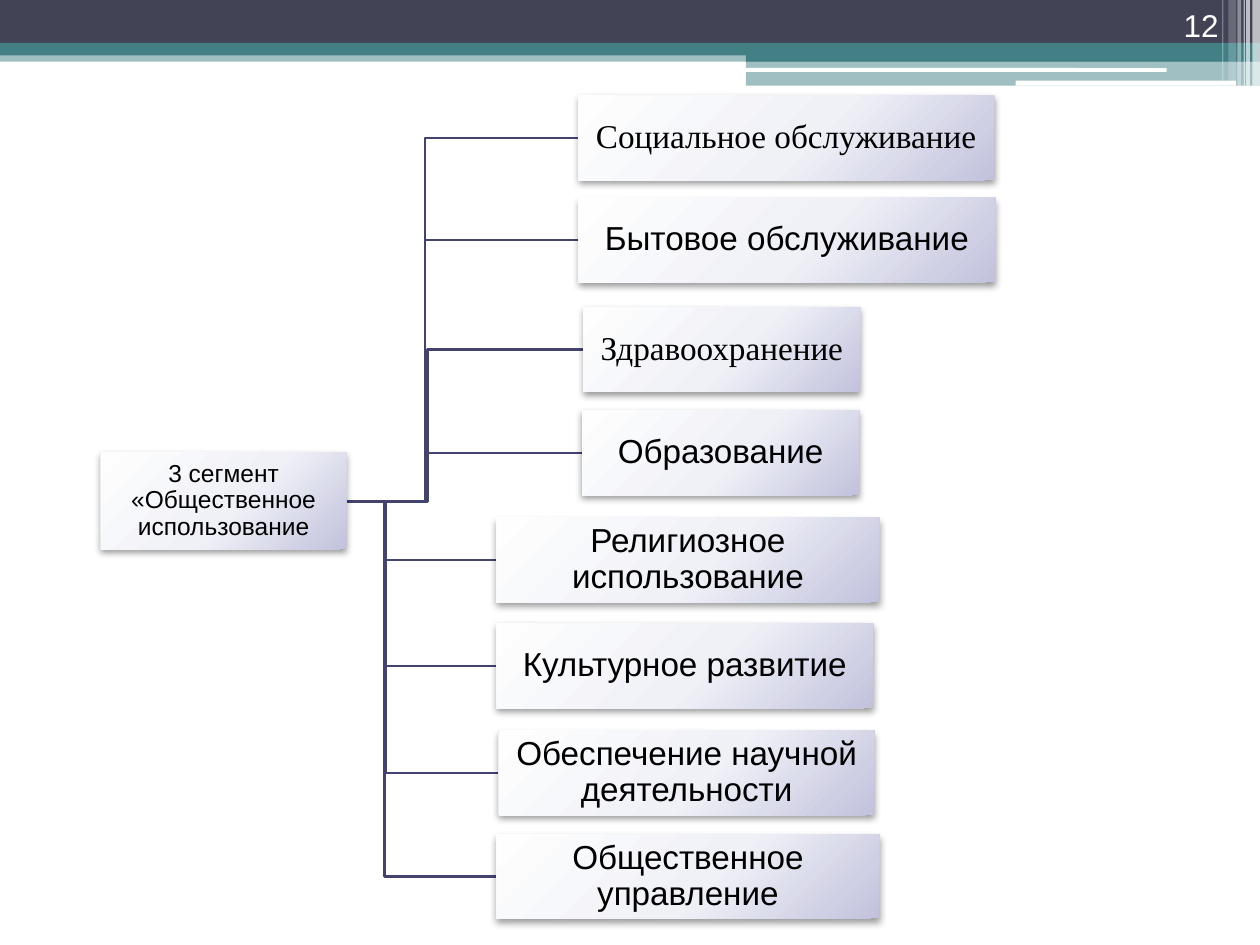
import pptx
import pptx.util
import pptx.dml.color
import pptx.enum.shapes
import pptx.enum.text
import pptx.oxml
import pptx.oxml.ns
from lxml import etree

Inches, Pt = pptx.util.Inches, pptx.util.Pt
RGBColor = pptx.dml.color.RGBColor
MSO_SHAPE = pptx.enum.shapes.MSO_SHAPE
PP_ALIGN = pptx.enum.text.PP_ALIGN
MSO_ANCHOR = pptx.enum.text.MSO_ANCHOR
qn = pptx.oxml.ns.qn

TEAL = RGBColor(0x43, 0x80, 0x86)
SLATE = RGBColor(0x42, 0x44, 0x56)
WHITE = RGBColor(0xFF, 0xFF, 0xFF)
BLACK = RGBColor(0, 0, 0)
LINK = RGBColor(0x42, 0x43, 0x6F)
BOX_STOPS = [
    (0, RGBColor(0xFE, 0xFE, 0xFE)),
    (55, RGBColor(0xF0, 0xF1, 0xF7)),
    (100, RGBColor(0xC2, 0xC2, 0xDD)),
]

SANS, SERIF = "Arial", "Times New Roman"
BOX_H = 0.67
LINK_START = (2.16, 3.98)
ROOT = (0.8, 3.59, 1.95, 0.77)

# left, top, width, text, font
BRANCHES = [
    (4.59, 0.76, 3.3, "Социальное обслуживание", SERIF),
    (4.59, 1.57, 3.31, "Бытовое обслуживание", SANS),
    (4.63, 2.44, 2.2, "Здравоохранение", SERIF),
    (4.62, 3.26, 2.2, "Образование", SANS),
    (3.94, 4.11, 3.04, "Религиозное использование", SANS),
    (3.94, 4.95, 2.99, "Культурное развитие", SANS),
    (3.96, 5.8, 2.98, "Обеспечение научной деятельности", SANS),
    (3.94, 6.62, 3.04, "Общественное управление", SANS),
]

# left, top, width, height, colour, opacity in percent
BANDS = [
    (0, 0.4, 10, 0.09, TEAL, 50),
    (0, 0, 10, 0.34, SLATE, 100),
    (0, 0.34, 10, 0.1, TEAL, 100),
    (5.92, 0.39, 4.08, 0.1, TEAL, 100),
    (5.92, 0.48, 4.08, 0.2, TEAL, 50),
]
PILLS = [(5.91, 0.54, 3.35, 0.03), (8.06, 0.64, 1.75, 0.04)]
# left, width, height, opacity in percent
STRIPES = [
    (9.94, 0.06, 0.68, 65),
    (9.89, 0.03, 0.68, 65),
    (9.87, 0.01, 0.68, 60),
    (9.82, 0.03, 0.68, 40),
    (9.75, 0.06, 0.64, 20),
    (9.7, 0.01, 0.64, 30),
]


def add_block(slide, box, color, opacity=100, kind=MSO_SHAPE.RECTANGLE):
    s = slide.shapes.add_shape(kind, *map(Inches, box))
    s.shadow.inherit = False
    s.line.fill.background()
    s.fill.solid()
    s.fill.fore_color.rgb = color
    if opacity < 100:
        clr = s.fill._xPr.find(".//" + qn("a:srgbClr"))
        etree.SubElement(clr, qn("a:alpha"), val=str(opacity * 1000))
    return s


def set_box_gradient(s):
    stops = "".join(
        f'<a:gs pos="{pos * 1000}"><a:srgbClr val="{color}"/></a:gs>'
        for pos, color in BOX_STOPS)
    grad = pptx.oxml.parse_xml(
        f'<a:gradFill {pptx.oxml.ns.nsdecls("a")} rotWithShape="1">'
        f'<a:gsLst>{stops}</a:gsLst><a:path path="circle">'
        '<a:fillToRect l="-40000" t="-90000" r="140000" b="190000"/>'
        '</a:path></a:gradFill>')
    spPr = s._element.spPr
    spPr.replace(spPr.find(qn("a:solidFill")), grad)


def set_box_shadow(s):
    effects = s._element.spPr.find(qn("a:effectLst"))
    shadow = etree.SubElement(
        effects, qn("a:outerShdw"), blurRad=str(Pt(4.1)), dist=str(Pt(2)),
        dir="5400000", rotWithShape="0")
    clr = etree.SubElement(shadow, qn("a:srgbClr"), val=str(BLACK))
    etree.SubElement(clr, qn("a:alpha"), val="40000")


def write_text(s, text, size, font, color, align, anchor):
    tf = s.text_frame
    tf.word_wrap = True
    tf.vertical_anchor = anchor
    p = tf.paragraphs[0]
    p.text = text
    p.alignment = align
    p.font.size = Pt(size)
    p.font.name = font
    p.font.color.rgb = color
    return tf


def add_box(slide, box, text, size, font):
    s = add_block(slide, box, WHITE)
    set_box_gradient(s)
    set_box_shadow(s)
    tf = write_text(s, text, size, font, BLACK, PP_ALIGN.CENTER, MSO_ANCHOR.MIDDLE)
    tf.margin_left = tf.margin_right = Inches(0.01)
    tf.margin_top = tf.margin_bottom = Inches(0.01)
    tf.paragraphs[0].line_spacing = 0.9


def add_link(slide, end_x, end_y):
    """Elbow line that bends halfway between the root and a branch."""
    x, y = LINK_START
    mid = (x + end_x) / 2
    builder = slide.shapes.build_freeform(Inches(x), Inches(y))
    points = [(mid, y), (mid, end_y), (end_x, end_y)]
    builder.add_line_segments(
        [(Inches(px), Inches(py)) for px, py in points], close=False)
    s = builder.convert_to_shape()
    s.shadow.inherit = False
    s.fill.background()
    s.line.color.rgb = LINK
    s.line.width = Pt(1.5)


def add_header(slide):
    for *box, color, opacity in BANDS:
        add_block(slide, box, color, opacity)
    for box in PILLS:
        add_block(slide, box, WHITE, kind=MSO_SHAPE.ROUNDED_RECTANGLE)
    for left, width, height, opacity in STRIPES:
        add_block(slide, (left, 0, width, height), WHITE, opacity)
    s = slide.shapes.add_textbox(*map(Inches, (8.94, 0, 0.83, 0.4)))
    write_text(s, "12", 18, SANS, WHITE, PP_ALIGN.RIGHT, MSO_ANCHOR.BOTTOM)


def main():
    prs = pptx.Presentation()
    prs.slide_width, prs.slide_height = Inches(10), Inches(7.5)
    slide = prs.slides.add_slide(prs.slide_layouts[6])

    add_header(slide)

    # Links lie behind the boxes, lowest branch first
    for left, top, *_ in reversed(BRANCHES):
        add_link(slide, left, top + BOX_H / 2)

    # Root and branches
    add_box(slide, ROOT, "3 сегмент «Общественное использование", 14, SANS)
    for left, top, width, text, font in BRANCHES:
        add_box(slide, (left, top, width, BOX_H), text, 19, font)

    prs.save("out.pptx")


if __name__ == "__main__":
    main()
